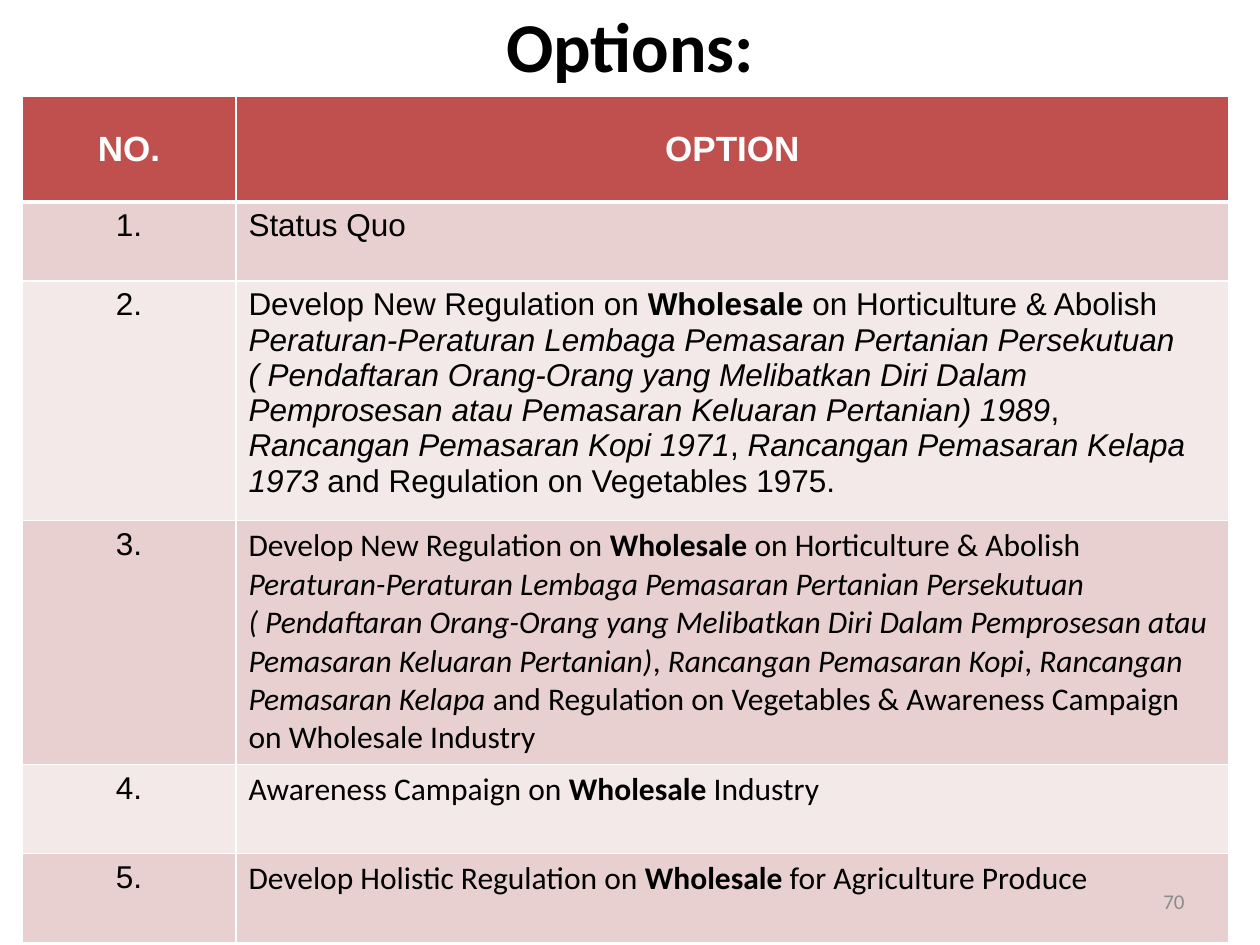
from lxml.etree import SubElement
from pptx import Presentation
from pptx.dml.color import RGBColor
from pptx.enum.text import MSO_ANCHOR, PP_ALIGN
from pptx.oxml.ns import qn
from pptx.util import Emu, Pt

PX = 914400 // 126
BLACK = RGBColor(0x00, 0x00, 0x00)
WHITE = RGBColor(0xFF, 0xFF, 0xFF)
GRAY = RGBColor(0x8C, 0x8C, 0x8C)
RED = RGBColor(0xC0, 0x50, 0x4D)
BANDS = (RGBColor(0xE8, 0xD0, 0xD0), RGBColor(0xF4, 0xE9, 0xE9))

PLAIN, BOLD, ITALIC = "plain", "bold", "italic"
TITLE = "Options:"
PAGE_NUMBER = "70"
HEADINGS = ("NO.", "OPTION")
NEW_REGULATION = [
    ("Develop New Regulation on ", PLAIN),
    ("Wholesale", BOLD),
    (" on Horticulture & Abolish ", PLAIN),
]
BOARD_RULES = (
    "Peraturan-Peraturan Lembaga Pemasaran Pertanian Persekutuan "
    "( Pendaftaran Orang-Orang yang Melibatkan Diri Dalam "
    "Pemprosesan atau Pemasaran Keluaran Pertanian)"
)
OPTIONS = [
    ("Arial", [("Status Quo", PLAIN)]),
    ("Arial", NEW_REGULATION + [
        (BOARD_RULES + " 1989", ITALIC),
        (", ", PLAIN),
        ("Rancangan Pemasaran Kopi 1971", ITALIC),
        (", ", PLAIN),
        ("Rancangan Pemasaran Kelapa 1973 ", ITALIC),
        ("and Regulation on Vegetables 1975.", PLAIN),
    ]),
    ("Calibri", NEW_REGULATION + [
        (BOARD_RULES, ITALIC),
        (", ", PLAIN),
        ("Rancangan Pemasaran Kopi", ITALIC),
        (", ", PLAIN),
        ("Rancangan Pemasaran Kelapa ", ITALIC),
        ("and Regulation on Vegetables & Awareness Campaign on Wholesale Industry", PLAIN),
    ]),
    ("Calibri", [
        ("Awareness Campaign on ", PLAIN),
        ("Wholesale", BOLD),
        (" Industry", PLAIN),
    ]),
    ("Calibri", [
        ("Develop Holistic Regulation on ", PLAIN),
        ("Wholesale", BOLD),
        (" for Agriculture Produce", PLAIN),
    ]),
]

TABLE_LEFT, TABLE_TOP = 22, 96
COLUMN_WIDTHS = (214, 993)
ROW_HEIGHTS = (106, 79, 224, 244, 89, 89)


def px(length):
    return Emu(length * PX)


def write(frame, runs, font="Arial", size=18, color=BLACK, align=PP_ALIGN.LEFT):
    frame.word_wrap = True
    paragraph = frame.paragraphs[0]
    paragraph.alignment = align
    for text, style in runs:
        run = paragraph.add_run()
        run.text = text
        run.font.name = font
        run.font.size = Pt(size)
        run.font.bold = style == BOLD
        run.font.italic = style == ITALIC
        run.font.color.rgb = color


def add_label(slide, box, runs, **text_format):
    label = slide.shapes.add_textbox(*map(px, box))
    label.text_frame.vertical_anchor = MSO_ANCHOR.MIDDLE
    write(label.text_frame, runs, **text_format)


def paint(cell, color, top=1, bottom=1):
    properties = cell._tc.get_or_add_tcPr()
    for side, width in (("L", 1), ("R", 1), ("T", top), ("B", bottom)):
        border = SubElement(properties, qn(f"a:ln{side}"), w=str(Pt(width)))
        SubElement(SubElement(border, qn("a:solidFill")), qn("a:srgbClr"), val=str(WHITE))
    cell.fill.solid()
    cell.fill.fore_color.rgb = color


def add_options_table(slide):
    table = slide.shapes.add_table(
        len(ROW_HEIGHTS), len(COLUMN_WIDTHS), px(TABLE_LEFT), px(TABLE_TOP),
        px(sum(COLUMN_WIDTHS)), px(sum(ROW_HEIGHTS)),
    ).table
    table.horz_banding = False
    for column, width in zip(table.columns, COLUMN_WIDTHS):
        column.width = px(width)
    for row, height in zip(table.rows, ROW_HEIGHTS):
        row.height = px(height)

    for cell, heading in zip(table.rows[0].cells, HEADINGS):
        paint(cell, RED, bottom=3)
        cell.vertical_anchor = MSO_ANCHOR.MIDDLE
        write(cell.text_frame, [(heading, BOLD)], size=20, color=WHITE, align=PP_ALIGN.CENTER)

    for number, (font, option) in enumerate(OPTIONS, 1):
        number_cell, option_cell = table.rows[number].cells
        for cell in (number_cell, option_cell):
            paint(cell, BANDS[(number - 1) % 2], top=3 if number == 1 else 1)
        write(number_cell.text_frame, [(f"{number}.", PLAIN)], align=PP_ALIGN.CENTER)
        write(option_cell.text_frame, option, font=font)


def main():
    deck = Presentation()
    deck.slide_width, deck.slide_height = px(1260), px(945)
    slide = deck.slides.add_slide(deck.slide_layouts[6])
    add_label(slide, (63, -5, 1134, 100), [(TITLE, BOLD)],
              font="Calibri", size=40, align=PP_ALIGN.CENTER)
    add_options_table(slide)
    add_label(slide, (903, 876, 294, 50), [(PAGE_NUMBER, PLAIN)],
              font="Calibri", size=12, color=GRAY, align=PP_ALIGN.RIGHT)
    deck.save("out.pptx")


if __name__ == "__main__":
    main()
